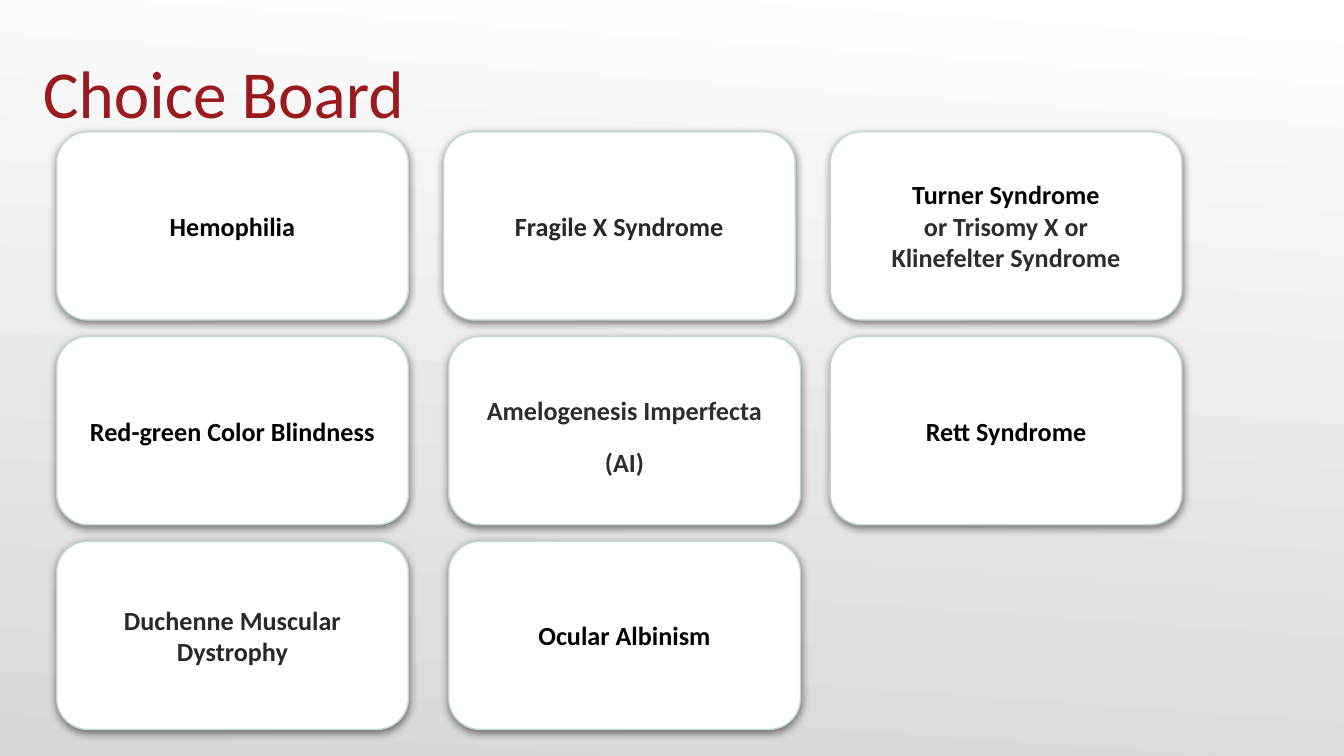
from dataclasses import dataclass

from lxml.etree import SubElement
from pptx import Presentation
from pptx.dml.color import RGBColor
from pptx.enum.shapes import MSO_SHAPE
from pptx.enum.text import MSO_ANCHOR, PP_ALIGN
from pptx.oxml.ns import qn
from pptx.util import Cm, Pt


# Colours and type sizes
@dataclass(frozen=True)
class Theme:
    font: str = "Calibri"
    title: str = "991B1E"
    black: str = "000000"
    gray: str = "282828"
    soft: str = "2D2D2D"
    card: str = "FFFFFF"
    edge: str = "BED7D3"
    sky: tuple = ("FFFFFF", "D8D8D8")
    large: int = 36
    small: int = 14


def color(code):
    return RGBColor.from_string(code)


def apply(item, values):
    for name, value in values.items():
        setattr(item, name, value)


class Board:
    def __init__(self, slide, theme):
        self.slide = slide
        self.theme = theme

    def style(self, font, size, code, bold=False):
        apply(font, {"name": self.theme.font, "size": Pt(size), "bold": bold})
        font.color.rgb = color(code)

    def backdrop(self):
        fill = self.slide.background.fill
        fill.gradient()
        fill.gradient_angle = 266
        for stop, code in zip(fill.gradient_stops, self.theme.sky):
            stop.color.rgb = color(code)

    def title(self, text):
        shape = self.slide.shapes.title
        apply(shape, {"left": Cm(0.81), "top": Cm(0.1),
                      "width": Cm(22.86), "height": Cm(2.39)})
        frame = shape.text_frame
        apply(frame, {"vertical_anchor": MSO_ANCHOR.BOTTOM, "margin_left": 0,
                      "margin_right": 0, "margin_bottom": 0})
        frame.text = text
        line = frame.paragraphs[0]
        line.alignment = PP_ALIGN.LEFT
        self.style(line.runs[0].font, self.theme.large, self.theme.title)

    def shadow(self, shape):
        shape.shadow.inherit = False
        effects = shape._element.spPr.find(qn("a:effectLst"))
        outer = SubElement(effects, qn("a:outerShdw"), blurRad=str(Pt(4.5)),
                           dist=str(Pt(1.5)), dir="5400000", rotWithShape="0")
        black = SubElement(outer, qn("a:srgbClr"), val=self.theme.black)
        SubElement(black, qn("a:alpha"), val="50000")

    def card(self, left, top, lines, space=None, base=0.25):
        """Draw a card; lines holds (text, colour) pairs."""
        shape = self.slide.shapes.add_shape(
            MSO_SHAPE.ROUNDED_RECTANGLE, Cm(left), Cm(top), Cm(6.65), Cm(3.56))
        shape.fill.solid()
        shape.fill.fore_color.rgb = color(self.theme.card)
        shape.line.color.rgb = color(self.theme.edge)
        shape.line.width = Pt(0.75)
        self.shadow(shape)

        frame = shape.text_frame
        pad = Cm(0.25)
        apply(frame, {"word_wrap": True, "vertical_anchor": MSO_ANCHOR.MIDDLE,
                      "margin_left": pad, "margin_right": pad,
                      "margin_top": pad, "margin_bottom": Cm(base)})
        para = frame.paragraphs[0]
        apply(para, {"alignment": PP_ALIGN.CENTER, "line_spacing": space})
        for index, (text, code) in enumerate(lines):
            if index:
                para.add_line_break()
            run = para.add_run()
            run.text = text
            self.style(run.font, self.theme.small, code, bold=True)


def main():
    theme = Theme()
    deck = Presentation()
    apply(deck, {"slide_width": Cm(25.4), "slide_height": Cm(14.29)})
    board = Board(deck.slides.add_slide(deck.slide_layouts[5]), theme)
    board.backdrop()
    board.title("Choice Board")

    # Topics by row; each has its lines and any text spacing
    black, gray, soft = theme.black, theme.gray, theme.soft
    rows = [
        [([("Hemophilia", black)], {}),
         ([("Fragile X Syndrome", gray)], {}),
         ([("Turner Syndrome", black), ("or Trisomy X or", soft),
           ("Klinefelter Syndrome", soft)], {})],
        [([("Red-green Color Blindness", black)], {}),
         ([("Amelogenesis Imperfecta (AI)", soft)],
          {"space": 1.66, "base": 0.42}),
         ([("Rett Syndrome", black)], {})],
        [([("Duchenne Muscular Dystrophy", gray)], {}),
         ([("Ocular Albinism", black)], {})],
    ]

    # Card grid; the middle column sits a little right below the first row
    for row, topics in enumerate(rows):
        for col, (lines, extra) in enumerate(topics):
            nudge = 0.1 if row and col == 1 else 0
            board.card(1.07 + 7.31 * col + nudge, 2.49 + 3.87 * row,
                       lines, **extra)

    deck.save("out.pptx")


if __name__ == "__main__":
    main()
